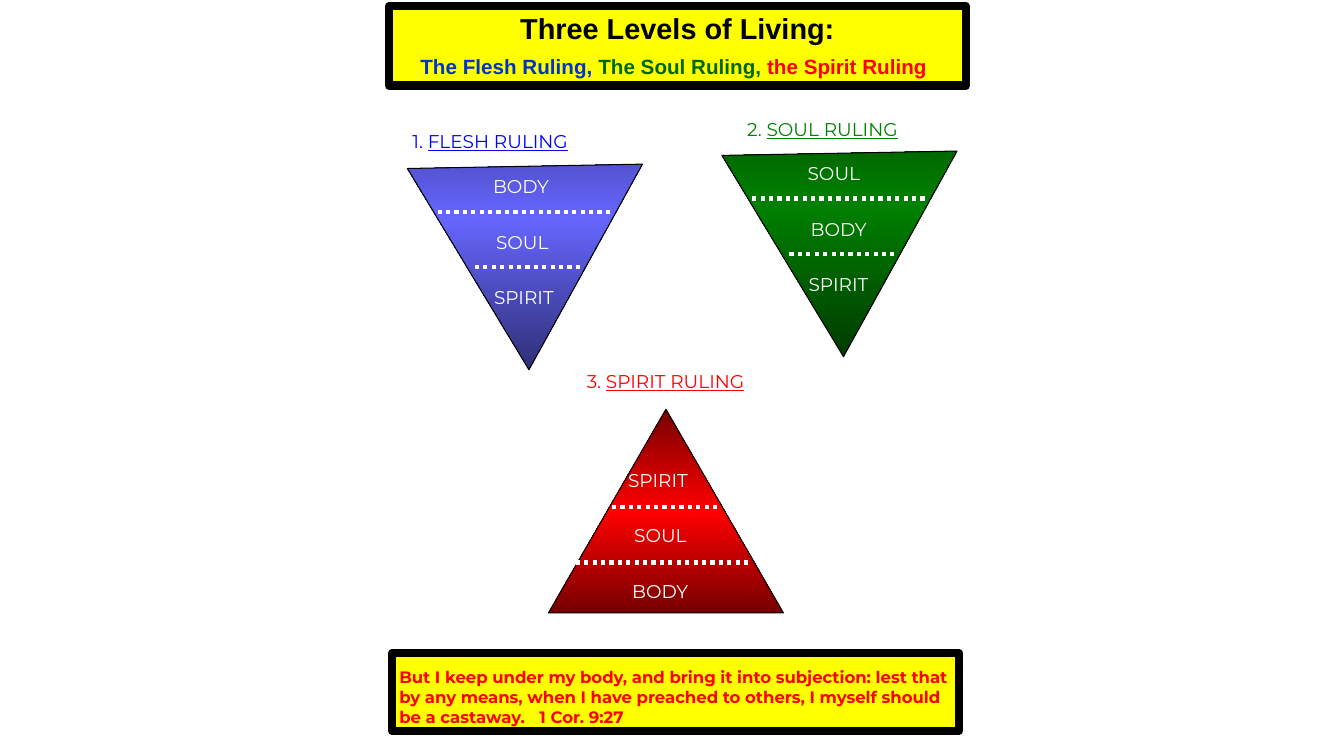
from copy import deepcopy
from lxml.etree import SubElement
from pptx import Presentation
from pptx.dml.color import RGBColor
from pptx.enum.dml import MSO_LINE
from pptx.enum.shapes import MSO_CONNECTOR as Connector, MSO_SHAPE as Shape
from pptx.enum.text import MSO_ANCHOR as Anchor, MSO_AUTO_SIZE as AutoSize, PP_ALIGN as Align
from pptx.oxml.ns import qn
from pptx.util import Inches, Pt


def paint(color_format, value):
    color_format.rgb = RGBColor.from_string(value)


def add_text(shapes, left, top, width, pieces, color):
    """One line of text, given as (text, underlined) pieces."""
    box = shapes.add_textbox(Inches(left), Inches(top), Inches(width), Inches(0.3))
    frame = box.text_frame
    frame.word_wrap = False
    frame.auto_size = AutoSize.SHAPE_TO_FIT_TEXT
    frame.margin_left = frame.margin_right = Inches(0.07)
    frame.margin_top = frame.margin_bottom = Inches(0.04)
    for text, underlined in pieces:
        run = frame.paragraphs[0].add_run()
        run.text = text
        run.font.size, run.font.name = Pt(13.2), "Montserrat"
        if underlined:
            run.font.underline = True
        paint(run.font.color, color)


presentation = Presentation()
presentation.slide_width, presentation.slide_height = Inches(13.33), Inches(7.5)
slide = presentation.slides.add_slide(presentation.slide_layouts[6])

# Triangles: every offset is measured from the triangle's own box
TRIANGLE_WIDTH, TRIANGLE_HEIGHT, ROW = 2.33, 2.02, 0.55
FIRST_LABEL = 0.55
LABEL_WIDTHS = {"BODY": 0.73, "SOUL": 0.71, "SPIRIT": 0.84}
POINTING_DOWN = dict(rotation=298.9, label_lefts=(1.06, 1.09, 1.07),
                     first_divider=0.95, dividers=((0.58, 2.29), (0.95, 1.99)))
POINTING_UP = dict(rotation=0, label_lefts=(0.72, 0.78, 0.76),
                   first_divider=0.97, dividers=((0.63, 1.68), (0.27, 1.98)))

# number, heading, heading box, text color, triangle corner, edge and middle color, form, labels
levels = [
    ("1. ", "FLESH RULING", (4.02, 1.25, 1.93), "0000FF", (3.76, 1.15),
     "2F2F76", "6666FF", POINTING_DOWN, ("BODY", "SOUL", "SPIRIT")),
    ("2. ", "SOUL RULING", (7.34, 1.13, 1.82), "008000", (6.88, 1.02),
     "003B00", "008000", POINTING_DOWN, ("SOUL", "BODY", "SPIRIT")),
    ("3. ", "SPIRIT RULING", (5.75, 3.63, 1.94), "FF0000", (5.44, 4.06),
     "760000", "FF0000", POINTING_UP, ("SPIRIT", "SOUL", "BODY")),
]
for number, heading, heading_box, color, (left, top), edge, middle, form, labels in levels:
    add_text(slide.shapes, *heading_box, [(number, False), (heading, True)], color)

    triangle = slide.shapes.add_shape(Shape.ISOSCELES_TRIANGLE, Inches(left), Inches(top),
                                      Inches(TRIANGLE_WIDTH), Inches(TRIANGLE_HEIGHT))
    triangle.rotation = form["rotation"]
    triangle.shadow.inherit = False
    triangle.line.width = Pt(0.75)
    paint(triangle.line.color, "000000")

    # Three-stop gradient that stays vertical when the triangle turns
    triangle.fill.gradient()
    triangle.fill.gradient_angle = 90
    gradient = triangle._element.spPr.find(qn("a:gradFill"))
    gradient.set("rotWithShape", "0")
    stop_list = gradient.find(qn("a:gsLst"))
    stop_list.append(deepcopy(stop_list[0]))
    for stop, position, shade in zip(triangle.fill.gradient_stops, (0, 0.5, 1),
                                     (edge, middle, edge)):
        stop.position = position
        paint(stop.color, shade)

    # Dotted dividers and labels
    group = slide.shapes.add_group_shape()
    for row, (start, end) in enumerate(form["dividers"]):
        y = Inches(top + form["first_divider"] + row * ROW)
        divider = group.shapes.add_connector(Connector.STRAIGHT, Inches(left + start), y,
                                             Inches(left + end), y)
        divider.line.width = Pt(3)
        divider.line.dash_style = MSO_LINE.ROUND_DOT
        paint(divider.line.color, "FFFFFF")
        SubElement(divider._element.spPr, qn("a:effectLst"))
    for row, (label, label_left) in enumerate(zip(labels, form["label_lefts"])):
        add_text(group.shapes, left + label_left, top + FIRST_LABEL + row * ROW,
                 LABEL_WIDTHS[label], [(label, False)], "FFFFFF")

# Yellow panels for the title and the verse
panels = []
for box in ((3.86, 0.06, 5.72, 0.79), (3.89, 6.48, 5.62, 0.77)):
    panel = slide.shapes.add_shape(Shape.RECTANGLE, *map(Inches, box))
    panel.shadow.inherit = False
    panel.fill.solid()
    paint(panel.fill.fore_color, "FFFF00")
    panel.line.width = Pt(6)
    paint(panel.line.color, "000000")
    panel.text_frame.vertical_anchor = Anchor.TOP
    panels.append(panel)
title_frame, verse_frame = [panel.text_frame for panel in panels]

# Title
title_frame.word_wrap = False
title_lines = [
    [("Three Levels of Living:", 20.6, "000000")],
    [("The Flesh Ruling, ", 14.7, "0033CC"), ("The Soul Ruling, ", 14.7, "006600"),
     ("the Spirit Ruling", 14.7, "FF0000"), (" ", 20.6, "FF0000")],
]
title_frame.add_paragraph()
for paragraph, pieces in zip(title_frame.paragraphs, title_lines):
    paragraph.alignment = Align.CENTER
    for text, size, color in pieces:
        run = paragraph.add_run()
        run.text = text
        run.font.size, run.font.name, run.font.bold = Pt(size), "Arial", True
        paint(run.font.color, color)

# Verse, with a tab stop before the reference
verse_frame.word_wrap = True
verse_frame.margin_left = verse_frame.margin_right = Inches(0.07)
verse_frame.margin_top, verse_frame.margin_bottom = Inches(0.14), Inches(0.04)
verse = verse_frame.paragraphs[0]
verse.text = ("But I keep under my body, and bring it into subjection: lest that by any means, "
              "when I have preached to others, I myself should be a castaway.\t1 Cor. 9:27")
verse.alignment = Align.LEFT
tab_list = SubElement(verse._p.get_or_add_pPr(), qn("a:tabLst"))
SubElement(tab_list, qn("a:tab"), pos=str(Inches(1.39)), algn="l")
font = verse.runs[0].font
font.size, font.name, font.bold = Pt(11.8), "Montserrat", True
paint(font.color, "FF0000")

presentation.save("out.pptx")
